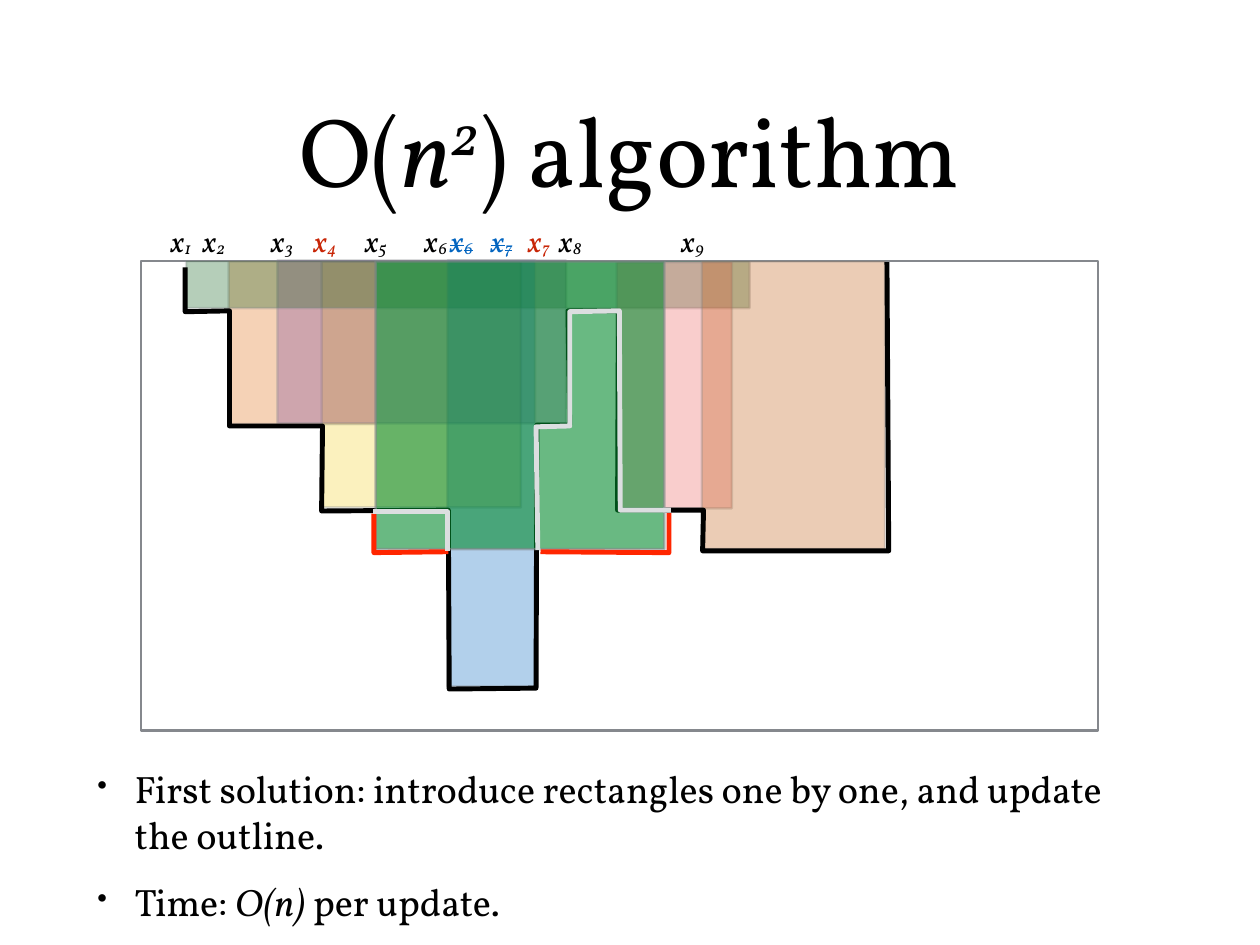
from lxml.etree import SubElement
from pptx import Presentation
from pptx.dml.color import RGBColor
from pptx.enum.shapes import MSO_SHAPE
from pptx.enum.text import MSO_ANCHOR, PP_ALIGN
from pptx.oxml.ns import qn
from pptx.util import Inches, Pt

WIDE, HIGH = 14.22, 10.67
COLS, ROWS = 108, 53
FONT = "Vollkorn"
BLACK = RGBColor(0x00, 0x00, 0x00)
GREY = RGBColor(0x85, 0x88, 0x8D)
PALE = RGBColor(0xDC, 0xDE, 0xE0)
RED = RGBColor(0xFF, 0x26, 0x00)
BRICK = RGBColor(0xC8, 0x25, 0x06)
BLUE = RGBColor(0x03, 0x65, 0xC0)
ORANGE = RGBColor(0xDE, 0x6A, 0x10)
YELLOW = RGBColor(0xF5, 0xD3, 0x28)
PURPLE = RGBColor(0x77, 0x3F, 0x9B)
FOREST = RGBColor(0x0B, 0x5D, 0x18)
CORAL = RGBColor(0xEC, 0x5C, 0x57)
BROWN = RGBColor(0xBD, 0x59, 0x0C)
GREEN = RGBColor(0x00, 0x88, 0x2B)

# Left, top, width, height in grid units, colour, opacity in percent
BLOCKS = [
    (9.9, 0, 16.6, 18.4, ORANGE, 30),
    (20.4, 0, 22.5, 27.8, YELLOW, 30),
    (15.4, -0.1, 32.6, 18.4, PURPLE, 30),
    (5.1, 0, 63.6, 5.3, FOREST, 30),
    (34.6, -0.1, 9.9, 48.1, BLUE, 30),
    (53.7, 0.1, 13, 27.8, CORAL, 30),
    (63.3, 0, 20.7, 32.5, BROWN, 30),
]
NEW = (26.5, 0, 32.6, 32.5, GREEN, 59)

# Points in grid units
OUTLINE = [(5, 0.7), (5, 5.7), (10, 5.6), (10, 18.6), (20.5, 18.6),
           (20.4, 28.2), (34.7, 28.1), (34.8, 48.3), (44.6, 48.2),
           (44.7, 18.5), (48.4, 18.5), (48.2, 5.6), (53.9, 5.6),
           (53.8, 28.1), (63.5, 28.1), (63.4, 32.7), (84.4, 32.7),
           (84.2, 0.1)]
CHANGES = [
    (RED, [(26.3, 28.5), (26.3, 32.9), (34.7, 32.8)]),
    (RED, [(45.1, 32.8), (59.6, 32.9), (59.6, 28.4)]),
    (PALE, [(26.2, 28.3), (34.6, 28.3), (34.6, 32.7)]),
    (PALE, [(44.8, 32.6), (44.6, 18.7), (48.4, 18.6), (48.4, 5.7),
            (54, 5.6), (54.1, 28.1), (59.8, 28.1)]),
]

# Index, tab stop in inches, colour, struck out
LABELS = [
    ("1", 0, BLACK, False), ("2", 0.36, BLACK, False),
    ("3", 1.13, BLACK, False), ("4", 1.61, BRICK, False),
    ("5", 2.19, BLACK, False), ("6", 2.86, BLACK, False),
    ("6", 3.15, BLUE, True), ("7", 3.61, BLUE, True),
    ("7", 4.03, BRICK, False), ("8", 4.38, BLACK, False),
    ("9", 5.76, BLACK, False),
]


def add_text(slide, box):
    frame = slide.shapes.add_textbox(*map(Inches, box)).text_frame
    frame.word_wrap = True
    frame.vertical_anchor = MSO_ANCHOR.MIDDLE
    frame.margin_left = frame.margin_right = Inches(0.06)
    frame.margin_top = frame.margin_bottom = Inches(0.06)
    return frame


def add_run(para, text, size, color=BLACK, italic=False, base=0, struck=False):
    run = para.add_run()
    run.text = text
    font = run.font
    font.name, font.size, font.italic = FONT, Pt(size), italic
    font.color.rgb = color
    props = run._r.get_or_add_rPr()
    if base:
        props.set("baseline", str(base * 1000))
    if struck:
        props.set("strike", "sngStrike")


def add_title(slide, box):
    para = add_text(slide, box).paragraphs[0]
    para.alignment = PP_ALIGN.CENTER
    add_run(para, "O(", 80)
    add_run(para, "n", 80, italic=True)
    add_run(para, "2", 80, italic=True, base=32)
    add_run(para, ") algorithm", 80)


def add_body(slide, box):
    frame = add_text(slide, box)
    points = [
        [("First solution: introduce rectangles one by one, "
          "and update the outline.", False)],
        [("Time: ", False), ("O(n)", True), (" per update.", False)],
    ]
    for i, parts in enumerate(points):
        para = frame.add_paragraph() if i else frame.paragraphs[0]
        props = para._p.get_or_add_pPr()
        props.set("marL", str(Inches(0.42)))
        props.set("indent", str(-Inches(0.42)))
        SubElement(props, qn("a:buSzPct")).set("val", "75000")
        SubElement(props, qn("a:buChar")).set("char", "•")
        para.space_before = Pt(17)
        for text, italic in parts:
            add_run(para, text, 31, italic=italic)


def add_labels(slide, box):
    para = add_text(slide, box).paragraphs[0]
    tabs = SubElement(para._p.get_or_add_pPr(), qn("a:tabLst"))
    for index, stop, color, struck in LABELS:
        if stop:
            tab = SubElement(tabs, qn("a:tab"))
            tab.set("pos", str(Inches(stop)))
            tab.set("algn", "l")
            add_run(para, "\t", 24)
        add_run(para, "x", 24, color, True, 0, struck)
        add_run(para, index, 24, color, True, -6, struck)


def add_chart(slide, box):
    left, top, wide, high = box
    col, row = wide / COLS, high / ROWS

    def spot(x, y):
        return Inches(left + x * col), Inches(top + y * row)

    def block(x, y, w, h, color=None, alpha=100):
        shape = slide.shapes.add_shape(
            MSO_SHAPE.RECTANGLE, *spot(x, y), Inches(w * col), Inches(h * row))
        shape.shadow.inherit = False
        shape.line.color.rgb, shape.line.width = GREY, Pt(2)
        if color is None:
            shape.fill.background()
            return
        shape.fill.solid()
        shape.fill.fore_color.rgb = color
        for tint in shape.element.spPr.iter(qn("a:srgbClr")):
            SubElement(tint, qn("a:alpha")).set("val", str(alpha * 1000))

    def trace(points, color):
        pen = slide.shapes.build_freeform(*spot(*points[0]))
        pen.add_line_segments([spot(*p) for p in points[1:]], close=False)
        shape = pen.convert_to_shape()
        shape.shadow.inherit = False
        shape.fill.background()
        shape.line.color.rgb, shape.line.width = color, Pt(4)

    # Frame, rectangles and their outline
    block(0, 0, COLS, ROWS)
    for item in BLOCKS:
        block(*item)
    trace(OUTLINE, BLACK)

    # New rectangle and the changes it makes
    block(*NEW)
    for color, points in CHANGES:
        trace(points, color)


def main():
    deck = Presentation()
    deck.slide_width, deck.slide_height = Inches(WIDE), Inches(HIGH)
    slide = deck.slides.add_slide(deck.slide_layouts[6])
    add_title(slide, (1.04, 0.49, 12.14, 2.36))
    add_chart(slide, (1.59, 2.95, 10.8, 5.3))
    add_labels(slide, (1.87, 2.44, 10.23, 0.56))
    add_body(slide, (1.04, 8.49, 12.14, 2.1))
    deck.save("out.pptx")


if __name__ == "__main__":
    main()
